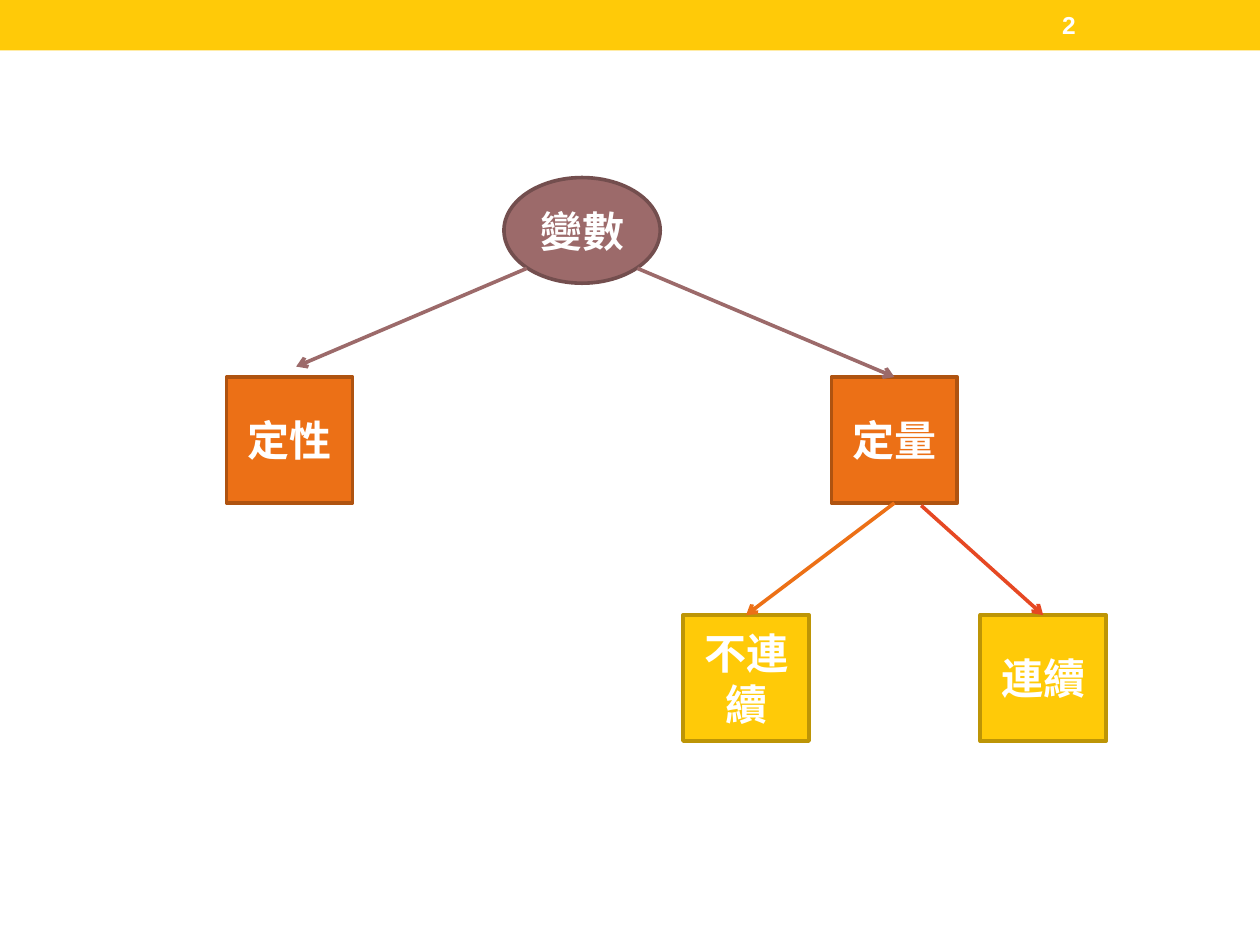
import pptx
import pptx.dml.color
import pptx.enum.shapes
import pptx.enum.text
import pptx.oxml
import pptx.oxml.ns
import pptx.util

Cm, Pt = pptx.util.Cm, pptx.util.Pt
SHAPE = pptx.enum.shapes.MSO_SHAPE
ALIGN = pptx.enum.text.PP_ALIGN

COLORS = {
    "white": "FFFFFF",
    "yellow": "FFCA08",
    "yellow_dark": "BD9506",
    "orange": "EC7016",
    "orange_dark": "AF5310",
    "mauve": "9C6A6A",
    "mauve_dark": "734E4E",
    "red": "E64823",
}


def rgb(name):
    return pptx.dml.color.RGBColor.from_string(COLORS[name])


def write(tf, text, size=24, color="white", bold=True, font="Arial", align=ALIGN.CENTER):
    tf.word_wrap = True
    tf.vertical_anchor = pptx.enum.text.MSO_ANCHOR.MIDDLE
    p = tf.paragraphs[0]
    p.alignment = align
    r = p.add_run()
    r.text = text
    r.font.name = font
    r.font.size = Pt(size)
    r.font.bold = bold
    r.font.color.rgb = rgb(color)


class TreeSlide:
    line_width = Pt(2.08)

    def __init__(self, prs):
        self.s = prs.slides.add_slide(prs.slide_layouts[6])

    def shape(self, kind, x, y, w, h, fill):
        sp = self.s.shapes.add_shape(kind, Cm(x), Cm(y), Cm(w), Cm(h))
        sp.shadow.inherit = False
        sp.fill.solid()
        sp.fill.fore_color.rgb = rgb(fill)
        sp.line.fill.background()
        return sp

    def node(self, text, x, y, color, kind=SHAPE.RECTANGLE, w=2.54, h=2.54):
        """Add a labelled shape outlined in the dark shade of its colour."""
        sp = self.shape(kind, x, y, w, h, color)
        sp.line.color.rgb = rgb(color + "_dark")
        sp.line.width = self.line_width
        write(sp.text_frame, text)

    def arrow(self, start, end, color):
        ends = [Cm(v) for v in (*start, *end)]
        cx = self.s.shapes.add_connector(pptx.enum.shapes.MSO_CONNECTOR.STRAIGHT, *ends)
        cx.line.color.rgb = rgb(color)
        cx.line.width = self.line_width
        ns = pptx.oxml.ns.nsdecls("a")
        cx.line._get_or_add_ln().append(
            pptx.oxml.parse_xml(f'<a:tailEnd {ns} type="arrow"/>'))
        cx._element.spPr.append(pptx.oxml.parse_xml(f"<a:effectLst {ns}/>"))

    def label(self, text, x, y, w, h, **style):
        tb = self.s.shapes.add_textbox(Cm(x), Cm(y), Cm(w), Cm(h))
        write(tb.text_frame, text, **style)


def main():
    prs = pptx.Presentation()
    prs.slide_width, prs.slide_height = Cm(25.4), Cm(19.05)
    slide = TreeSlide(prs)

    slide.shape(SHAPE.RECTANGLE, 0, 0, 25.4, 1.02, "yellow")

    slide.node("變數", 10.16, 3.58, "mauve", SHAPE.OVAL, 3.15, 2.13)
    for text, x, y, color in [
        ("定性", 4.57, 7.6, "orange"),
        ("定量", 16.76, 7.6, "orange"),
        ("不連續", 13.77, 12.4, "yellow"),
        ("連續", 19.76, 12.4, "yellow"),
    ]:
        slide.node(text, x, y, color)

    for start, end, color in [
        ((10.62, 5.41), (5.97, 7.39), "mauve"),
        ((12.85, 5.41), (18.03, 7.6), "mauve"),
        ((18.03, 10.14), (15.04, 12.4), "orange"),
        ((18.57, 10.19), (21.03, 12.4), "red"),
    ]:
        slide.arrow(start, end, color)

    slide.label("2", 21.16, 0.05, 2.97, 0.91, size=14, align=ALIGN.LEFT)
    prs.save("out.pptx")


if __name__ == "__main__":
    main()
